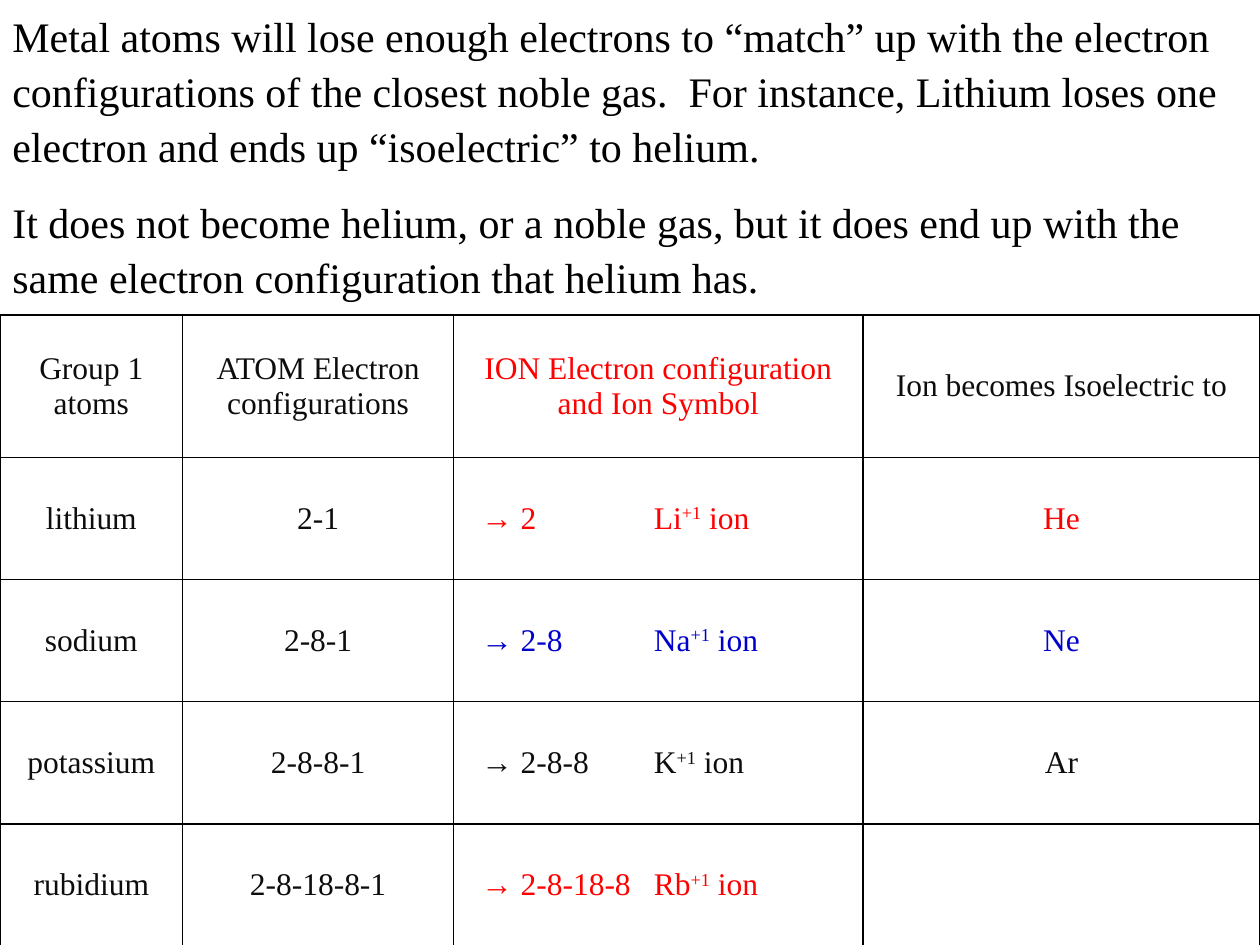
from pptx import Presentation
from pptx.dml.color import RGBColor
from pptx.enum.text import MSO_ANCHOR, PP_ALIGN
from pptx.oxml import parse_xml
from pptx.oxml.ns import nsdecls
from pptx.util import Inches, Pt

COLORS = {"black": "000000", "ink": "0D0D0D", "red": "FF0000", "blue": "0000CC"}

INTRO = [
    "Metal atoms will lose enough electrons to “match” up with the electron "
    "configurations of the closest noble gas.  For instance, Lithium loses one "
    "electron and ends up “isoelectric” to helium.",
    "It does not become helium, or a noble gas, but it does end up with the "
    "same electron configuration that helium has.",
]
HEADERS = [
    ("Group 1\natoms", "ink"),
    ("ATOM Electron\nconfigurations", "ink"),
    ("ION Electron configuration\nand Ion Symbol", "red"),
    ("Ion becomes Isoelectric to", "ink"),
]
# atom, atom configuration, ion configuration, ion symbol, noble gas, ion color
ATOMS = [
    ("lithium", "2-1", "2", "Li", "He", "red"),
    ("sodium", "2-8-1", "2-8", "Na", "Ne", "blue"),
    ("potassium", "2-8-8-1", "2-8-8", "K", "Ar", "ink"),
    ("rubidium", "2-8-18-8-1", "2-8-18-8", "Rb", "", "red"),
]
COLUMN_WIDTHS = [1.45, 2.15, 3.25, 3.15]
ROW_HEIGHTS = [1.13] + [0.97] * len(ATOMS)
ION_INDENT = 0.22
SYMBOL_TAB = 1.37


class SlideWriter:
    font_name = "Times New Roman"

    def __init__(self, slide):
        self.slide = slide

    def run(self, paragraph, text, size, color, superscript=False):
        run = paragraph.add_run()
        run.text = text
        for name, value in {"name": self.font_name, "size": Pt(size)}.items():
            setattr(run.font, name, value)
        run.font.color.rgb = RGBColor.from_string(COLORS[color])
        if superscript:
            run._r.get_or_add_rPr().set("baseline", "30000")

    def text_box(self, left, top, width, height, paragraphs):
        box = self.slide.shapes.add_textbox(*map(Inches, (left, top, width, height)))
        frame = box.text_frame
        frame.word_wrap = True
        for index, text in enumerate(paragraphs):
            paragraph = frame.add_paragraph() if index else frame.paragraphs[0]
            for name, value in {"line_spacing": 1.09, "space_after": Pt(12)}.items():
                setattr(paragraph, name, value)
            self.run(paragraph, text, 24, "black")

    def table(self, left, top, widths, heights):
        frame = self.slide.shapes.add_table(
            len(heights), len(widths), Inches(left), Inches(top),
            Inches(sum(widths)), Inches(sum(heights)))
        table = frame.table
        for name in ("first_row", "horz_banding"):
            setattr(table, name, False)
        for column, width in zip(table.columns, widths):
            column.width = Inches(width)
        for row, height in zip(table.rows, heights):
            row.height = Inches(height)
        for cell in table.iter_cells():
            cell.vertical_anchor = MSO_ANCHOR.MIDDLE
            cell.fill.background()
            self.borders(cell)
        return table

    def borders(self, cell):
        properties = cell._tc.get_or_add_tcPr()
        for index, side in enumerate(("lnL", "lnR", "lnT", "lnB")):
            properties.insert(index, parse_xml(
                f'<a:{side} {nsdecls("a")} w="{Pt(1)}"><a:solidFill>'
                f'<a:srgbClr val="{COLORS["black"]}"/></a:solidFill></a:{side}>'))

    def centered_cell(self, cell, text, color="ink"):
        frame = cell.text_frame
        for index, line in enumerate(text.split("\n")):
            paragraph = frame.add_paragraph() if index else frame.paragraphs[0]
            paragraph.alignment = PP_ALIGN.CENTER
            if line:
                self.run(paragraph, line, 18, color)

    def ion_cell(self, cell, configuration, symbol, color):
        """Write the ion's configuration, then its symbol at a tab stop."""
        cell.margin_left = Inches(ION_INDENT)
        paragraph = cell.text_frame.paragraphs[0]
        paragraph._p.get_or_add_pPr().append(parse_xml(
            f'<a:tabLst {nsdecls("a")}>'
            f'<a:tab pos="{Inches(SYMBOL_TAB)}" algn="l"/></a:tabLst>'))
        self.run(paragraph, f"→ {configuration}\t{symbol}", 18, color)
        self.run(paragraph, "+1", 18, color, superscript=True)
        self.run(paragraph, " ion", 18, color)


def main():
    presentation = Presentation()
    presentation.slide_width = Inches(10)
    presentation.slide_height = Inches(7.5)
    writer = SlideWriter(presentation.slides.add_slide(presentation.slide_layouts[6]))

    writer.text_box(0, 0, 10, 2.32, INTRO)
    ions = writer.table(0, 2.5, COLUMN_WIDTHS, ROW_HEIGHTS)
    for column, (header, color) in enumerate(HEADERS):
        writer.centered_cell(ions.cell(0, column), header, color)
    for row, (atom, before, after, symbol, gas, color) in enumerate(ATOMS, start=1):
        writer.centered_cell(ions.cell(row, 0), atom)
        writer.centered_cell(ions.cell(row, 1), before)
        writer.ion_cell(ions.cell(row, 2), after, symbol, color)
        writer.centered_cell(ions.cell(row, 3), gas, color)

    presentation.save("out.pptx")


if __name__ == "__main__":
    main()
